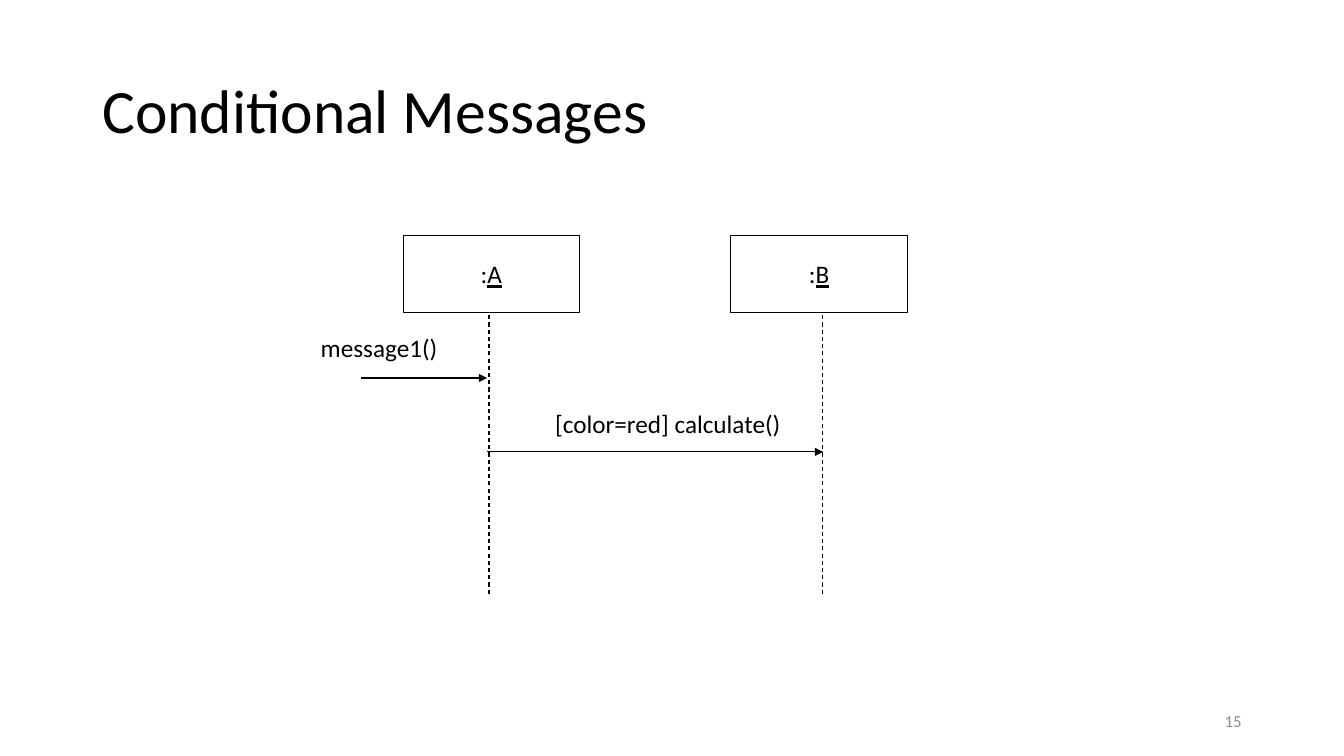
from dataclasses import dataclass

import pptx
import pptx.dml.color
import pptx.enum.dml
import pptx.enum.shapes
import pptx.enum.text
import pptx.oxml
import pptx.oxml.ns
import pptx.util

Pt = pptx.util.Pt
RGB = pptx.dml.color.RGBColor
ALIGN = pptx.enum.text.PP_ALIGN
ANCHOR = pptx.enum.text.MSO_ANCHOR


@dataclass(frozen=True)
class Theme:
    """Colours, font and sizes of the slide."""
    ink: RGB = RGB(0, 0, 0)
    paper: RGB = RGB(255, 255, 255)
    muted: RGB = RGB(0x8C, 0x8C, 0x8C)
    font: str = "Calibri"
    title: float = 44
    body: float = 18
    number: float = 12
    line: float = 0.75


T = Theme()


def add_run(p, text, size, color, underline=None):
    """Append one styled run to a paragraph."""
    r = p.add_run()
    r.text = text
    r.font.name = T.font
    r.font.size = Pt(size)
    r.font.color.rgb = color
    r.font.underline = underline


def add_text(s, box, text, size, color=T.ink, align=ALIGN.LEFT,
             anchor=ANCHOR.MIDDLE, wrap=True):
    """Place a one-line text box and return its paragraph."""
    tf = s.shapes.add_textbox(*map(Pt, box)).text_frame
    tf.word_wrap = wrap
    tf.vertical_anchor = anchor
    p = tf.paragraphs[0]
    p.alignment = align
    add_run(p, text, size, color)
    return p


def add_line(s, x1, y1, x2, y2):
    """Draw a plain thin line without a shadow."""
    line = s.shapes.add_connector(
        pptx.enum.shapes.MSO_CONNECTOR.STRAIGHT, Pt(x1), Pt(y1), Pt(x2), Pt(y2))
    line.line.color.rgb = T.ink
    line.line.width = Pt(T.line)
    props = line.line._get_or_add_ln().getparent()
    props.append(pptx.oxml.parse_xml(
        f"<a:effectLst {pptx.oxml.ns.nsdecls('a')}/>"))
    return line


def add_lifeline(s, x, top, bottom):
    """Draw the dashed lifeline of an object."""
    line = add_line(s, x, top, x, bottom)
    line.line.dash_style = pptx.enum.dml.MSO_LINE.DASH


def add_object(s, box, name):
    """Draw an object box with its underlined name."""
    sp = s.shapes.add_shape(
        pptx.enum.shapes.MSO_SHAPE.RECTANGLE, *map(Pt, box))
    sp.shadow.inherit = False
    sp.fill.solid()
    sp.fill.fore_color.rgb = T.paper
    sp.line.color.rgb = T.ink
    sp.line.width = Pt(T.line)
    tf = sp.text_frame
    tf.word_wrap = False
    tf.vertical_anchor = ANCHOR.MIDDLE
    p = tf.paragraphs[0]
    p.alignment = ALIGN.CENTER
    add_run(p, ":", T.body, T.ink)
    add_run(p, name, T.body, T.ink, True)


def add_message(s, x1, x2, y, label_box, label):
    """Draw a message arrow and its label."""
    arrow = add_line(s, x1, y, x2, y)
    arrow.line._get_or_add_ln().append(pptx.oxml.parse_xml(
        f"<a:tailEnd {pptx.oxml.ns.nsdecls('a')} type='triangle'/>"))
    add_text(s, label_box, label, T.body, anchor=ANCHOR.TOP, wrap=False)


def add_title(s, box):
    """Place the slide title."""
    p = add_text(s, box, "Conditional Messages", T.title)
    p.line_spacing = 0.9


def add_sequence(s, box):
    """Place the sequence diagram in its box."""
    left, top, width, height = box
    object_w, object_h = 126, 55
    objects = (("A", left + 66, left + 127.3),
               ("B", left + width - object_w, left + 365.6))
    for name, x, life_x in objects:
        add_lifeline(s, life_x, top + 52, top + height)
        add_object(s, (x, top, object_w, object_h), name)
    a_x, b_x = left + 126, left + 366
    add_message(s, left + 36, a_x, top + 102,
                (left, top + 66, 99, 29), "message1()")
    add_message(s, a_x, b_x, top + 154.8,
                (left + 167.5, top + 120, 177, 29), "[color=red] calculate()")


def add_number(s, box):
    """Place the slide number."""
    add_text(s, box, "15", T.number, T.muted, ALIGN.RIGHT)


def main():
    """Build and save the slide."""
    prs = pptx.Presentation()
    prs.slide_width, prs.slide_height = Pt(960), Pt(540)
    s = prs.slides.add_slide(prs.slide_layouts[6])
    s.background.fill.solid()
    s.background.fill.fore_color.rgb = T.paper
    add_title(s, (66, 28.8, 828, 104.4))
    add_sequence(s, (222, 168, 426, 258))
    add_number(s, (678, 500.5, 216, 28.8))
    prs.save("out.pptx")


if __name__ == "__main__":
    main()
